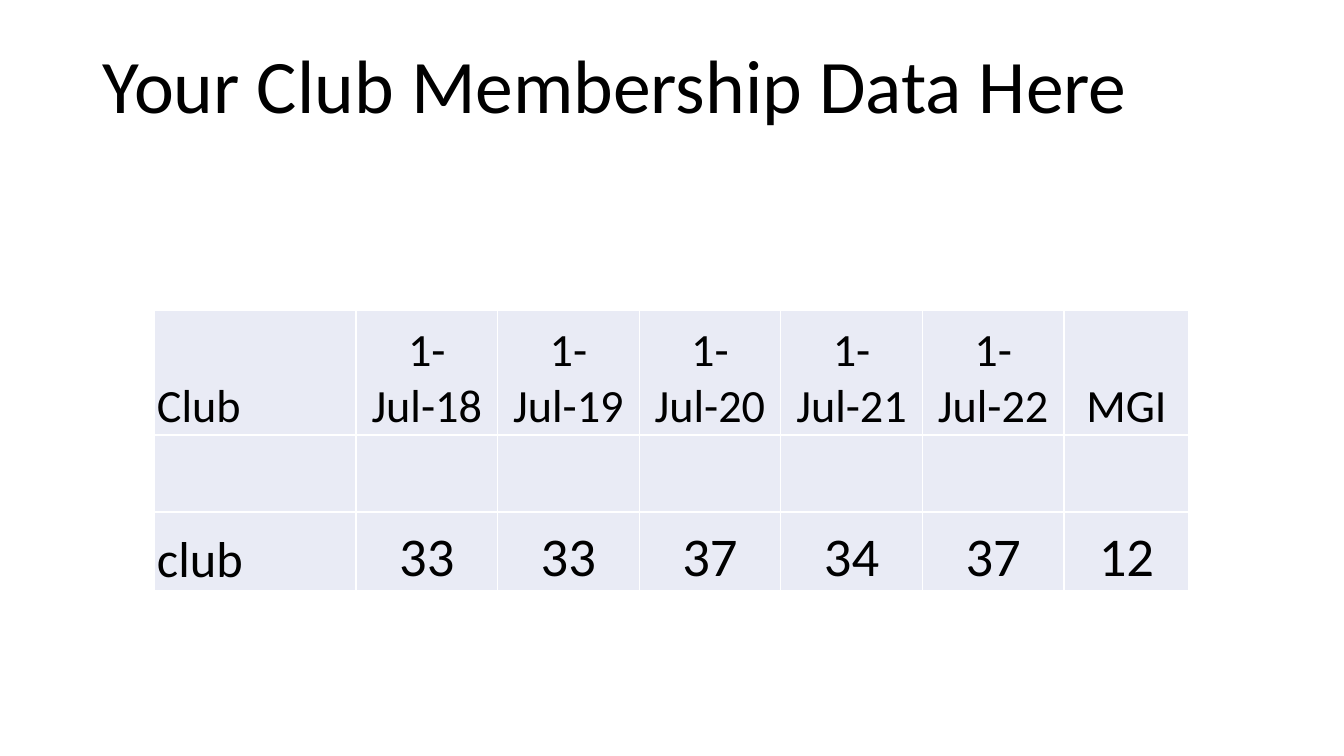
from lxml.etree import SubElement
from pptx import Presentation
from pptx.dml.color import RGBColor
from pptx.enum.text import MSO_ANCHOR as Anchor, PP_ALIGN as Align
from pptx.oxml.ns import qn
from pptx.util import Pt

TITLE = "Your Club Membership Data Here"
ROWS = [
    ["Club", "1-Jul-18", "1-Jul-19", "1-Jul-20", "1-Jul-21", "1-Jul-22", "MGI"],
    [""] * 7,
    ["club", "33", "33", "37", "34", "37", "12"],
]
COLORS = {"text": "000000", "cell": "E9EBF5", "border": "FFFFFF"}
FONT = "Calibri"
TITLE_SIZE = 54
ROW_SIZES = [(33, 33), (18, 18), (36, 39)]

EMU_PER_PX = 914400 / 100.8
SLIDE_SIZE = (1344, 756)
TITLE_BOX = (93, 32, 1159, 103)
TABLE_LEFT, TABLE_TOP = 154, 310
CLUB_WIDTH, DATES_WIDTH, MGI_WIDTH = 202, 708, 125
DATE_COUNT = len(ROWS[0]) - 2
COLUMN_WIDTHS = [CLUB_WIDTH] + [DATES_WIDTH / DATE_COUNT] * DATE_COUNT + [MGI_WIDTH]
ROW_HEIGHTS = [125, 77, 79]


def px(length):
    return round(length * EMU_PER_PX)


CELL_FORMAT = {
    "margin_left": px(3),
    "margin_top": px(3),
    "margin_right": px(3),
    "margin_bottom": 0,
    "vertical_anchor": Anchor.BOTTOM,
}


def write(paragraph, text, size):
    font = paragraph.add_run().font if text else paragraph.font
    if text:
        paragraph.runs[0].text = text
    font.name = FONT
    font.size = Pt(size)
    font.color.rgb = RGBColor.from_string(COLORS["text"])


def add_borders(cell):
    properties = cell._tc.get_or_add_tcPr()
    for side in ("a:lnL", "a:lnR", "a:lnT", "a:lnB"):
        line = SubElement(properties, qn(side), w=str(Pt(1)))
        fill = SubElement(line, qn("a:solidFill"))
        SubElement(fill, qn("a:srgbClr"), val=COLORS["border"])


def add_title(slide):
    box = slide.shapes.add_textbox(*map(px, TITLE_BOX))
    frame = box.text_frame
    frame.word_wrap = True
    frame.vertical_anchor = Anchor.BOTTOM
    paragraph = frame.paragraphs[0]
    paragraph.line_spacing = 0.9
    write(paragraph, TITLE, TITLE_SIZE)


def add_membership_table(slide):
    table = slide.shapes.add_table(
        len(ROWS), len(COLUMN_WIDTHS), px(TABLE_LEFT), px(TABLE_TOP),
        px(sum(COLUMN_WIDTHS)), px(sum(ROW_HEIGHTS)),
    ).table
    table.first_row = False
    table.horz_banding = False
    for column, width in zip(table.columns, COLUMN_WIDTHS):
        column.width = px(width)
    for row, height, texts, sizes in zip(table.rows, ROW_HEIGHTS, ROWS, ROW_SIZES):
        row.height = px(height)
        for index, (cell, text) in enumerate(zip(row.cells, texts)):
            for name, value in CELL_FORMAT.items():
                setattr(cell, name, value)
            add_borders(cell)
            cell.fill.solid()
            cell.fill.fore_color.rgb = RGBColor.from_string(COLORS["cell"])
            paragraph = cell.text_frame.paragraphs[0]
            paragraph.alignment = Align.CENTER if index else Align.LEFT
            write(paragraph, text, sizes[min(index, 1)])


def main():
    presentation = Presentation()
    presentation.slide_width, presentation.slide_height = map(px, SLIDE_SIZE)
    slide = presentation.slides.add_slide(presentation.slide_layouts[6])
    add_title(slide)
    add_membership_table(slide)
    presentation.save("out.pptx")


if __name__ == "__main__":
    main()
